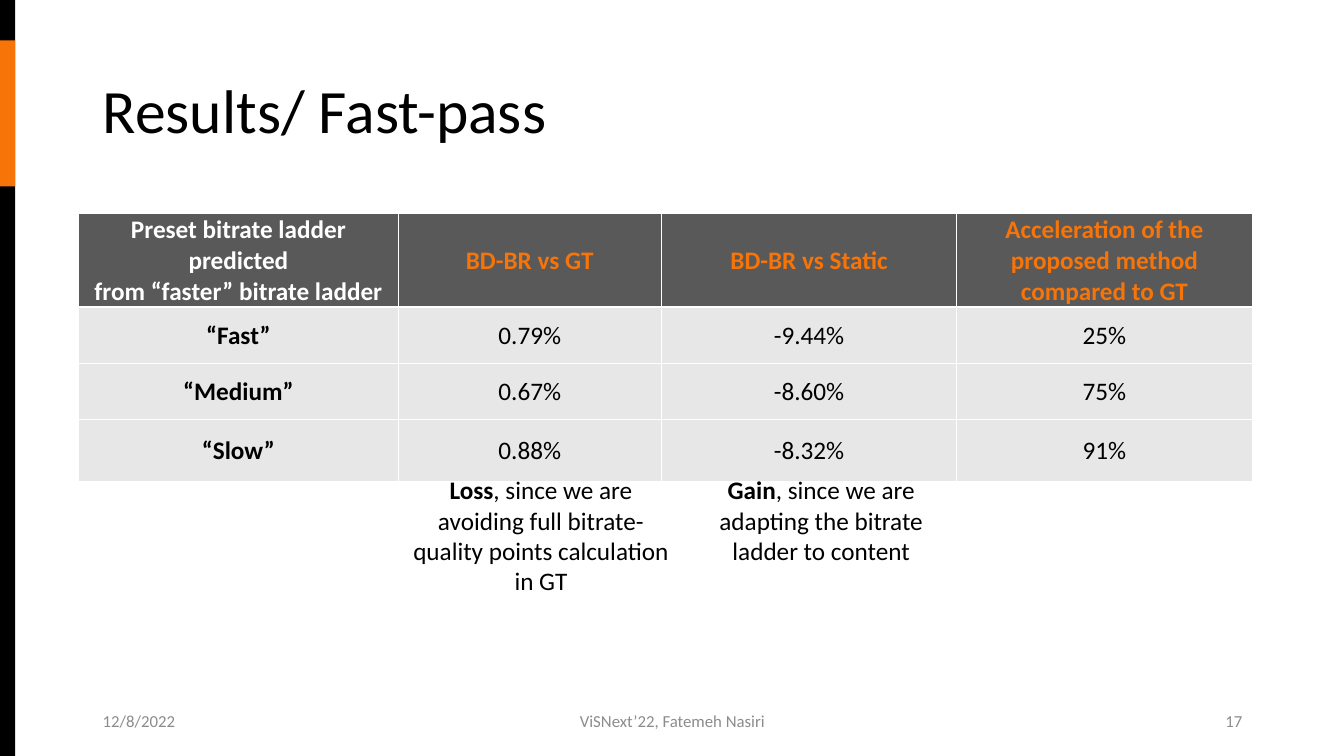
from lxml import etree
from pptx import Presentation
from pptx.dml.color import RGBColor
from pptx.enum.shapes import MSO_SHAPE
from pptx.enum.text import MSO_ANCHOR, PP_ALIGN
from pptx.oxml.ns import qn
from pptx.util import Pt

RECTANGLE = MSO_SHAPE.RECTANGLE
TOP, MIDDLE = MSO_ANCHOR.TOP, MSO_ANCHOR.MIDDLE
LEFT, CENTER, RIGHT = PP_ALIGN.LEFT, PP_ALIGN.CENTER, PP_ALIGN.RIGHT

EMU_PER_PX = 9144  # 100 px to the inch
FONT = "Calibri"
TITLE_ONLY_LAYOUT = 5
COLORS = {
    "black": "000000",
    "white": "FFFFFF",
    "orange": "F77408",
    "header": "595959",
    "row": "E7E7E7",
    "footer": "8C8C8C",
}

COLUMN_WIDTHS = [317, 261, 293, 293]
ROW_HEIGHTS = [80, 56, 56, 61]
RESULTS = [
    [
        "Preset bitrate ladder predicted\nfrom “faster” bitrate ladder",
        "BD-BR vs GT",
        "BD-BR vs Static",
        "Acceleration of the proposed method compared to GT",
    ],
    ["“Fast”", "0.79%", "-9.44%", "25%"],
    ["“Medium”", "0.67%", "-8.60%", "75%"],
    ["“Slow”", "0.88%", "-8.32%", "91%"],
]


def px(length):
    return length * EMU_PER_PX


def rgb(name):
    return RGBColor.from_string(COLORS[name])


def place(shape, left, top, width, height):
    shape.left, shape.top = px(left), px(top)
    shape.width, shape.height = px(width), px(height)


def format_run(run, size, color, bold=False):
    run.font.name = FONT
    run.font.size = Pt(size)
    run.font.bold = bold
    run.font.color.rgb = rgb(color)


def add_bar(slide, top, height, color):
    bar = slide.shapes.add_shape(RECTANGLE, 0, px(top), px(15), px(height))
    bar.shadow.inherit = False
    bar.fill.solid()
    bar.fill.fore_color.rgb = rgb(color)
    bar.line.fill.background()


def set_title(slide, text):
    title = slide.shapes.title
    place(title, 92, 40, 1150, 145)
    title.text_frame.text = text
    title.text_frame.vertical_anchor = MIDDLE
    paragraph = title.text_frame.paragraphs[0]
    paragraph.alignment = LEFT
    paragraph.line_spacing = 0.9
    format_run(paragraph.runs[0], 44, "black")


def add_text(slide, box, parts, size, color, alignment, anchor):
    """Add one paragraph made of (text, bold) parts."""
    text_frame = slide.shapes.add_textbox(*map(px, box)).text_frame
    text_frame.word_wrap = True
    text_frame.vertical_anchor = anchor
    paragraph = text_frame.paragraphs[0]
    paragraph.alignment = alignment
    for text, bold in parts:
        run = paragraph.add_run()
        run.text = text
        format_run(run, size, color, bold)


def set_borders(cell, color):
    properties = cell._tc.get_or_add_tcPr()
    for index, side in enumerate(("a:lnL", "a:lnR", "a:lnT", "a:lnB")):
        line = etree.Element(qn(side), w=str(Pt(1)))
        fill = etree.SubElement(line, qn("a:solidFill"))
        etree.SubElement(fill, qn("a:srgbClr"), val=COLORS[color])
        properties.insert(index, line)


def fill_cell(cell, text, fill, color, bold):
    cell.fill.solid()
    cell.fill.fore_color.rgb = rgb(fill)
    cell.vertical_anchor = MIDDLE
    cell.margin_left = cell.margin_right = cell.margin_top = px(1)
    cell.margin_bottom = 0
    cell.text_frame.text = text
    for paragraph in cell.text_frame.paragraphs:
        paragraph.alignment = CENTER
        format_run(paragraph.runs[0], 18, color, bold)
    set_borders(cell, "white")


def add_results_table(slide):
    table = slide.shapes.add_table(
        len(ROW_HEIGHTS), len(COLUMN_WIDTHS), px(78), px(212),
        px(sum(COLUMN_WIDTHS)), px(sum(ROW_HEIGHTS)),
    ).table
    for column, width in zip(table.columns, COLUMN_WIDTHS):
        column.width = px(width)
    for row, height in zip(table.rows, ROW_HEIGHTS):
        row.height = px(height)
    for row_index, values in enumerate(RESULTS):
        for column_index, text in enumerate(values):
            is_header, is_label = row_index == 0, column_index == 0
            if is_header:
                color = "white" if is_label else "orange"
            else:
                color = "black"
            fill_cell(table.cell(row_index, column_index), text,
                      "header" if is_header else "row", color,
                      is_header or is_label)


def main():
    presentation = Presentation()
    presentation.slide_width, presentation.slide_height = px(1333), px(750)
    layout = presentation.slide_layouts[TITLE_ONLY_LAYOUT]
    slide = presentation.slides.add_slide(layout)

    # Side stripe
    add_bar(slide, 0, 750, "black")
    add_bar(slide, 40, 145, "orange")

    # Title and results
    set_title(slide, "Results/ Fast-pass")
    add_results_table(slide)

    # Remarks under the table columns
    for left, width, word, reason in [
        (392, 289, "Loss", ", since we are avoiding full bitrate-quality "
                           "points calculation in GT"),
        (703, 223, "Gain", ", since we are adapting the bitrate ladder "
                           "to content"),
    ]:
        add_text(slide, (left, 466, width, 101),
                 [(word, True), (reason, False)], 18, "black", CENTER, TOP)

    # Footer
    for left, width, text, alignment in [
        (92, 300, "12/8/2022", LEFT),
        (442, 450, "ViSNext’22, Fatemeh Nasiri", CENTER),
        (942, 300, "17", RIGHT),
    ]:
        add_text(slide, (left, 695, width, 40), [(text, False)],
                 12, "footer", alignment, MIDDLE)

    presentation.save("out.pptx")


if __name__ == "__main__":
    main()
